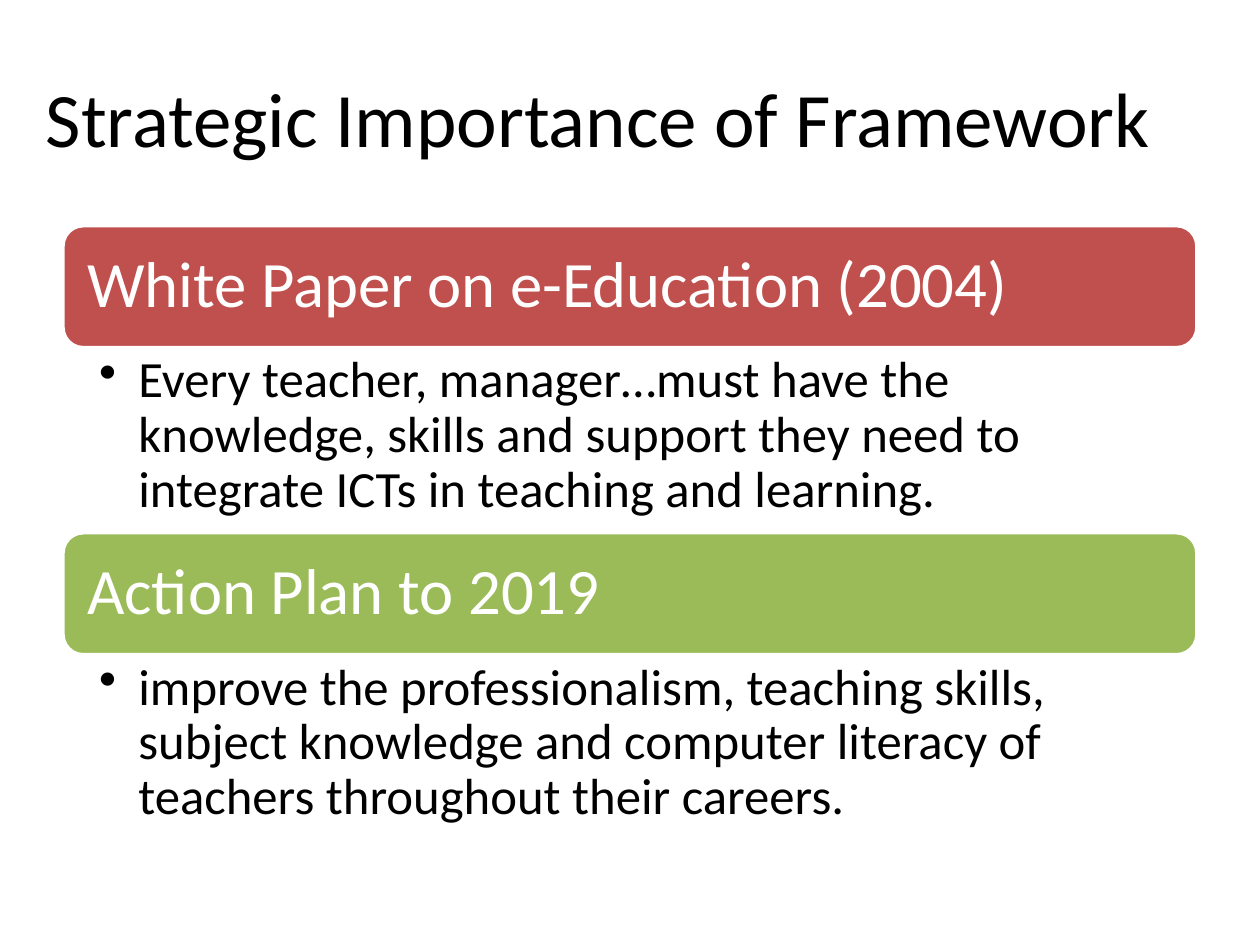
from dataclasses import dataclass

from lxml import etree
from pptx import Presentation
from pptx.dml.color import RGBColor
from pptx.enum.shapes import MSO_SHAPE
from pptx.enum.text import MSO_ANCHOR, PP_ALIGN
from pptx.oxml.ns import qn
from pptx.util import Cm, Pt

ROUNDED = MSO_SHAPE.ROUNDED_RECTANGLE
TOP, MIDDLE = MSO_ANCHOR.TOP, MSO_ANCHOR.MIDDLE
LEFT, CENTER = PP_ALIGN.LEFT, PP_ALIGN.CENTER


@dataclass(frozen=True)
class Theme:
    font: str = "Calibri"
    title_size: int = 44
    header_size: int = 37
    body_size: int = 29
    dark: str = "000000"
    light: str = "FFFFFF"
    red: str = "C0504D"
    green: str = "9BBB59"


class SlideBuilder:
    def __init__(self, slide, theme):
        self.slide = slide
        self.theme = theme

    def set_text(self, box, text, size, color, align=LEFT, anchor=MIDDLE,
                 insets=(0.25, 0.13), spacing=1.0, bullet_indent=None):
        frame = box.text_frame
        frame.word_wrap = True
        frame.vertical_anchor = anchor
        frame.margin_left = frame.margin_right = Cm(insets[0])
        frame.margin_top = frame.margin_bottom = Cm(insets[1])
        para = frame.paragraphs[0]
        para.text = text
        para.alignment = align
        para.line_spacing = spacing
        if bullet_indent:
            properties = para._p.get_or_add_pPr()
            properties.set("marL", str(Cm(bullet_indent)))
            properties.set("indent", str(-Cm(bullet_indent)))
            etree.SubElement(properties, qn("a:buChar"), char="•")
        para.font.name = self.theme.font
        para.font.size = Pt(size)
        para.font.color.rgb = RGBColor.from_string(color)

    def text_box(self, left, top, width, height):
        return self.slide.shapes.add_textbox(
            Cm(left), Cm(top), Cm(width), Cm(height))

    def title(self, text, left, top, width, height):
        box = self.text_box(left, top, width, height)
        self.set_text(box, text, self.theme.title_size, self.theme.dark, CENTER)

    def header(self, text, fill, left, top, width, height):
        box = self.slide.shapes.add_shape(
            ROUNDED, Cm(left), Cm(top), Cm(width), Cm(height))
        box.shadow.inherit = False
        box.fill.solid()
        box.fill.fore_color.rgb = RGBColor.from_string(fill)
        box.line.color.rgb = RGBColor.from_string(self.theme.light)
        box.line.width = Pt(2)
        self.set_text(box, text, self.theme.header_size, self.theme.light,
                      insets=(0.37, 0.37), spacing=0.9)

    def bullet(self, text, left, top, width, height):
        box = self.text_box(left, top, width, height)
        self.set_text(box, text, self.theme.body_size, self.theme.dark,
                      anchor=TOP, insets=(0.73, 0.13), spacing=0.9,
                      bullet_indent=0.79)


def main():
    deck = Presentation()
    deck.slide_width, deck.slide_height = Cm(25.4), Cm(19.05)
    theme = Theme()
    builder = SlideBuilder(deck.slides.add_slide(deck.slide_layouts[6]), theme)

    # Title
    builder.title("Strategic Importance of Framework", 0, 0.76, 24.13, 3.18)

    # Policy sections: coloured header with a bullet below
    sections = [
        ("White Paper on e-Education (2004)", theme.red,
         "Every teacher, manager…must have the knowledge, skills and support "
         "they need to integrate ICTs in teaching and learning."),
        ("Action Plan to 2019", theme.green,
         "improve the professionalism, teaching skills, subject knowledge and "
         "computer literacy of teachers throughout their careers."),
    ]
    left, first_top, width = 1.27, 4.55, 22.86
    header_height, body_height = 2.46, 3.73
    for index, (heading, fill, statement) in enumerate(sections):
        top = first_top + index * (header_height + body_height)
        builder.header(heading, fill, left, top, width, header_height)
        builder.bullet(statement, left, top + header_height, width, body_height)

    deck.save("out.pptx")


if __name__ == "__main__":
    main()
